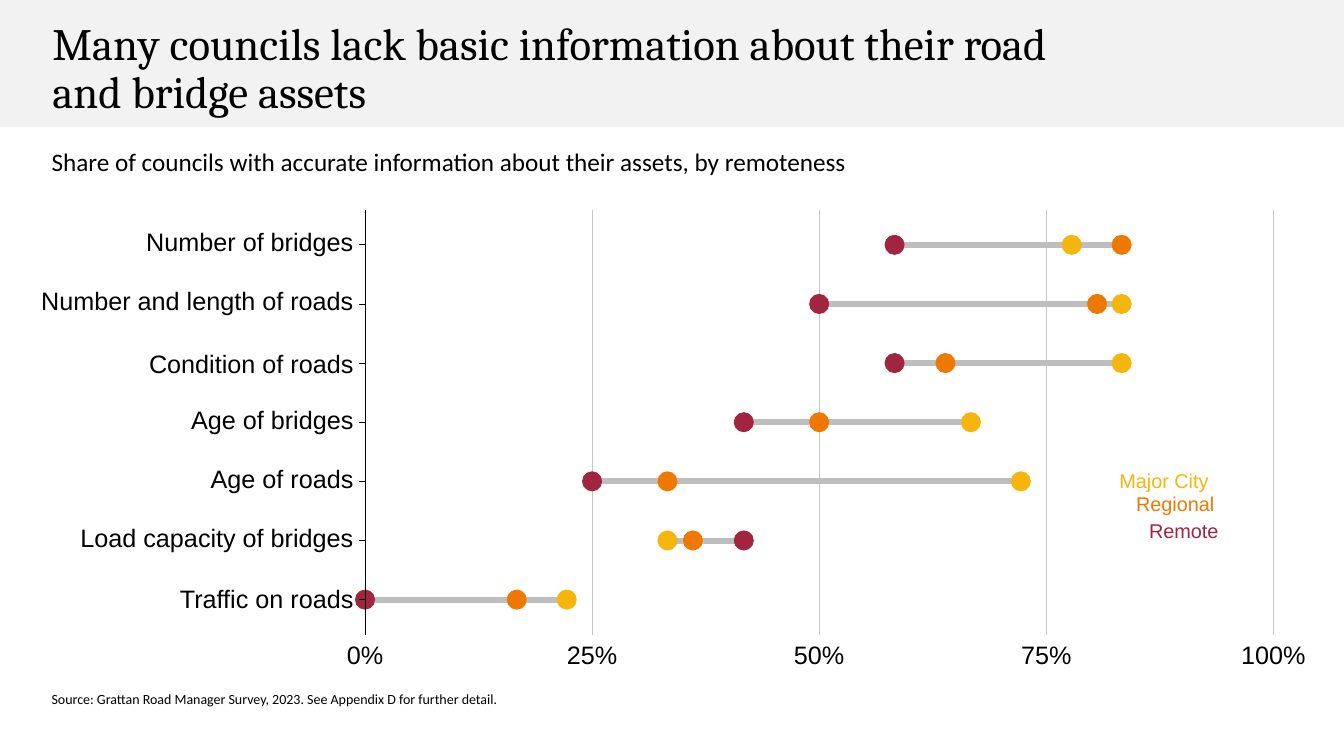
from pptx import Presentation
from pptx import util as u
from pptx.dml.color import RGBColor
from pptx.enum import shapes, text
from pptx.oxml import parse_xml
from pptx.oxml.ns import nsdecls

COLORS = {"black": "000000", "band": "F2F2F2", "grid": "C3C7CB", "range": "BEBEBE",
          "Major City": "F5B50C", "Regional": "EF7900", "Remote": "A1253E"}
REGIONS = ["Major City", "Regional", "Remote"]
SHARES = {  # asset information: share of councils in each of REGIONS
    "Number of bridges": (0.778, 0.833, 0.583),
    "Number and length of roads": (0.833, 0.806, 0.5),
    "Condition of roads": (0.833, 0.639, 0.583),
    "Age of bridges": (0.667, 0.5, 0.417),
    "Age of roads": (0.722, 0.333, 0.25),
    "Load capacity of bridges": (0.333, 0.361, 0.417),
    "Traffic on roads": (0.222, 0.167, 0),
}
# Plot area, rows and dots, in cm
LEFT, TOP, WIDTH, HEIGHT = 9.2, 5.28, 22.89, 10.72
FIRST_ROW, ROW_STEP = 6.17, 1.49
DOT = 0.48

prs = Presentation()
prs.slide_width, prs.slide_height = u.Cm(33.87), u.Cm(19.05)
s = prs.slides.add_slide(prs.slide_layouts[5])


def write(sp, content, size=18, font="Arial", color="black", align=text.PP_ALIGN.LEFT,
          anchor=text.MSO_ANCHOR.MIDDLE, inset=0, spacing=1.0, wrap=True):
    tf = sp.text_frame
    tf.word_wrap = wrap
    tf.auto_size = text.MSO_AUTO_SIZE.NONE
    tf.vertical_anchor = anchor
    tf.margin_left = tf.margin_right = u.Cm(inset)
    tf.margin_top = tf.margin_bottom = u.Cm(inset / 2)
    p = tf.paragraphs[0]
    p.alignment, p.line_spacing = align, spacing
    r = p.add_run()
    r.text = content
    r.font.size, r.font.name = u.Pt(size), font
    r.font.color.rgb = RGBColor.from_string(COLORS[color])


def draw(kind, x1, y1, x2, y2, color, weight=0):
    """Draw a line, or a filled preset shape, between two corners given in cm."""
    if kind == "line":
        sp = s.shapes.add_connector(shapes.MSO_CONNECTOR.STRAIGHT, *map(u.Cm, (x1, y1, x2, y2)))
        sp._element.spPr.append(parse_xml(f'<a:effectLst {nsdecls("a")}/>'))
    else:
        sp = s.shapes.add_shape(kind, *map(u.Cm, (x1, y1, x2 - x1, y2 - y1)))
        sp.shadow.inherit = False
        sp.fill.solid()
        sp.fill.fore_color.rgb = RGBColor.from_string(COLORS[color])
    if weight:
        sp.line.color.rgb = RGBColor.from_string(COLORS[color])
        sp.line.width = u.Pt(weight)
    else:
        sp.line.fill.background()
    return sp


# Header band behind the title
band = draw(shapes.MSO_SHAPE.RECTANGLE, 0, 0, 33.87, 3.2, "band")
s.shapes._spTree.insert(2, band._element)

title = s.shapes.title
title.left, title.top, title.width, title.height = u.Cm(1.07), u.Cm(1.02), u.Cm(26.77), u.Cm(1.5)
write(title, "Many councils lack basic information about their road and bridge assets",
      size=32, font="Cambria", inset=0.25, spacing=0.9)

for content, top, height, size in [
    ("Share of councils with accurate information about their assets, by remoteness", 3.64, 0.94, 18),
    ("Source: Grattan Road Manager Survey, 2023. See Appendix D for further detail.", 17.33, 1.27, 10),
]:
    sp = s.shapes.add_textbox(u.Cm(1.05), u.Cm(top), u.Cm(31.67), u.Cm(height))
    write(sp, content, size=size, font="Calibri", anchor=text.MSO_ANCHOR.TOP, inset=0.25, spacing=0.9)

# Gridlines and share labels
for share in (0, 0.25, 0.5, 0.75, 1):
    x = LEFT + share * WIDTH
    draw("line", x, TOP + HEIGHT, x, TOP, "grid", 0.37)
    sp = s.shapes.add_textbox(u.Cm(x - 0.82), u.Cm(16.26), u.Cm(1.64), u.Cm(0.48))
    write(sp, f"{share:.0%}", align=text.PP_ALIGN.CENTER, wrap=False)

# Ranges, then the dots of each region above them
rows = {label: FIRST_ROW + i * ROW_STEP for i, label in enumerate(SHARES)}
for label, y in rows.items():
    low, high = (LEFT + f(SHARES[label]) * WIDTH for f in (min, max))
    draw("line", low, y, high, y, "range", 4.27)
for i, region in enumerate(REGIONS):
    for label, y in rows.items():
        x = LEFT + SHARES[label][i] * WIDTH
        draw(shapes.MSO_SHAPE.OVAL, x - DOT / 2, y - DOT / 2, x + DOT / 2, y + DOT / 2, region, 0.71)

# Axis with ticks and row labels
draw("line", LEFT, TOP + HEIGHT, LEFT, TOP, "black", 0.75)
label_widths = (5.23, 7.87, 5.16, 4.09, 3.61, 6.88, 4.42)
label_centres = (6.08, 7.58, 9.16, 10.57, 12.06, 13.55, 15.09)
for (label, y), width, centre in zip(rows.items(), label_widths, label_centres):
    draw("line", LEFT - 0.15, y, LEFT, y, "black", 0.56)
    sp = s.shapes.add_textbox(u.Cm(8.91 - width), u.Cm(centre - 0.29), u.Cm(width), u.Cm(0.58))
    write(sp, label, align=text.PP_ALIGN.RIGHT, wrap=False)

# Colour key
for region, left, top, width in zip(REGIONS, (28.21, 28.63, 28.96), (11.89, 12.47, 13.13),
                                    (2.26, 1.98, 1.75)):
    sp = s.shapes.add_textbox(u.Cm(left), u.Cm(top), u.Cm(width), u.Cm(0.46))
    write(sp, region, size=14.2, color=region, wrap=False)

prs.save("out.pptx")
